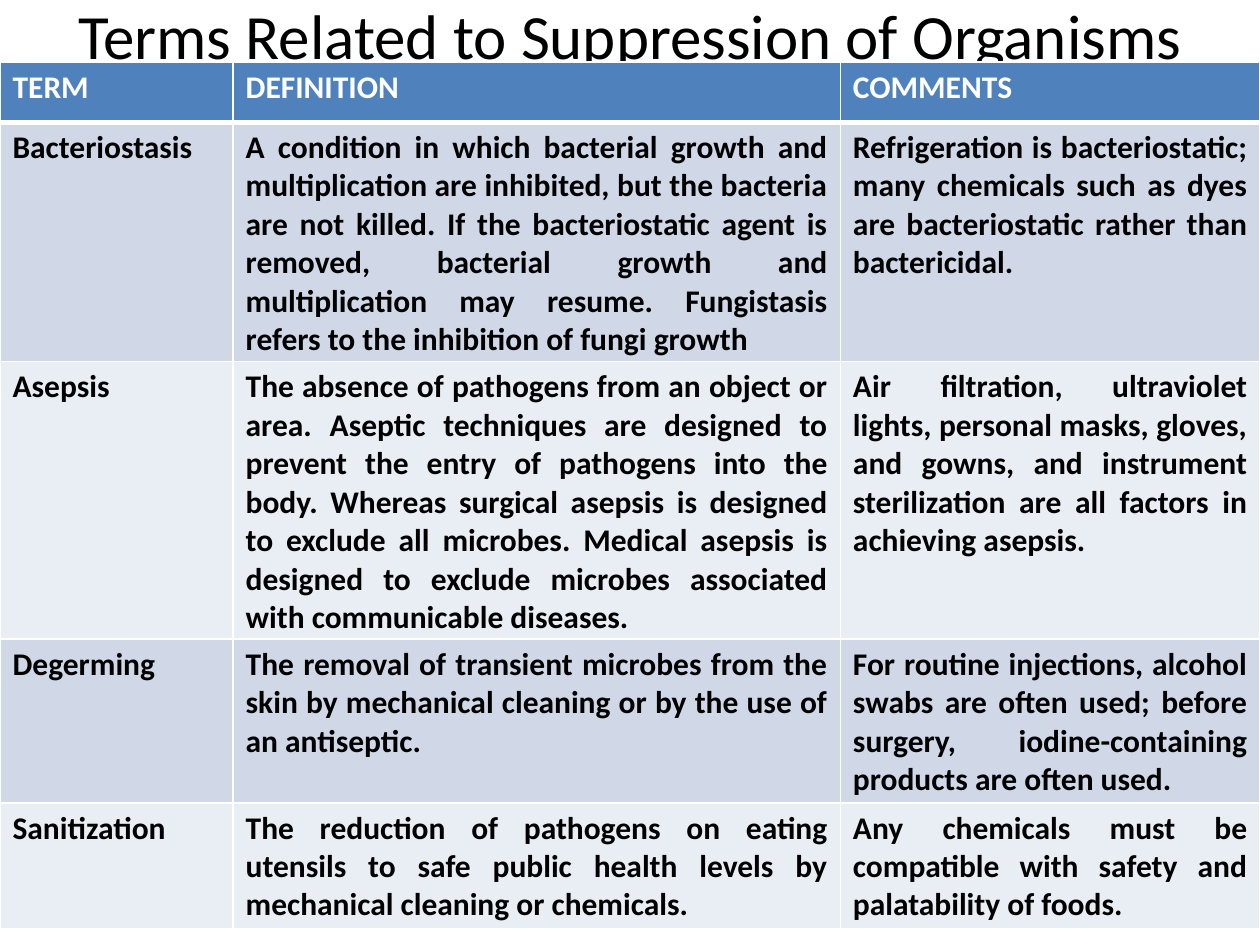
from lxml.etree import SubElement
from pptx import Presentation
from pptx.dml.color import RGBColor
from pptx.enum.text import MSO_ANCHOR as Anchor, PP_ALIGN as Align
from pptx.oxml.ns import qn
from pptx.util import Inches, Pt

FONT = "Calibri"
BLACK, WHITE = "000000", "FFFFFF"
HEADER_FILL, BAND_FILLS = "4F81BD", ("D0D8E8", "E9EDF4")
COLUMN_WIDTHS = (1.85, 4.82, 3.33)
ROW_HEIGHTS = (0.48, 1.88, 2.19, 1.25, 0.97)
ROWS = (
    ("TERM", "DEFINITION", "COMMENTS"),
    ("Bacteriostasis",
     "A condition in which bacterial growth and multiplication are inhibited, "
     "but the bacteria are not killed. If the bacteriostatic agent is removed, "
     "bacterial growth and multiplication may resume. Fungistasis refers to "
     "the inhibition of fungi growth",
     "Refrigeration is bacteriostatic; many chemicals such as dyes are "
     "bacteriostatic rather than bactericidal."),
    ("Asepsis",
     "The absence of pathogens from an object or area. Aseptic techniques are "
     "designed to prevent the entry of pathogens into the body. Whereas "
     "surgical asepsis is designed to exclude all microbes. Medical asepsis is "
     "designed to exclude microbes associated with communicable diseases.",
     "Air filtration, ultraviolet lights, personal masks, gloves, and gowns, "
     "and instrument sterilization are all factors in achieving asepsis."),
    ("Degerming",
     "The removal of transient microbes from the skin by mechanical cleaning "
     "or by the use of an antiseptic.",
     "For routine injections, alcohol swabs are often used; before surgery, "
     "iodine-containing products are often used."),
    ("Sanitization",
     "The reduction of pathogens on eating utensils to safe public health "
     "levels by mechanical cleaning or chemicals.",
     "Any chemicals must be compatible with safety and palatability of foods."),
)


def color(hex_string):
    return RGBColor.from_string(hex_string)


def style_paragraph(paragraph, size, hex_string, align, bold=False):
    paragraph.alignment = align
    font = paragraph.font
    font.name, font.size, font.bold = FONT, Pt(size), bold
    font.color.rgb = color(hex_string)


def set_borders(cell, widths):
    """Draw white borders; widths are points for left, right, top, bottom."""
    properties = cell._tc.get_or_add_tcPr()
    for position, (side, width) in enumerate(zip("LRTB", widths)):
        line = properties.makeelement(qn(f"a:ln{side}"), {"w": str(Pt(width))})
        fill = SubElement(line, qn("a:solidFill"))
        SubElement(fill, qn("a:srgbClr"), val=WHITE)
        properties.insert(position, line)


def add_title(slide, left, top, width, height):
    frame = slide.shapes.add_textbox(left, top, width, height).text_frame
    frame.word_wrap = True
    frame.vertical_anchor = Anchor.MIDDLE
    frame.margin_top = frame.margin_bottom = 0
    frame.text = "Terms Related to Suppression of Organisms"
    style_paragraph(frame.paragraphs[0], 36, BLACK, Align.CENTER)


def add_terms_table(slide, left, top, width, height):
    table = slide.shapes.add_table(
        len(ROWS), len(COLUMN_WIDTHS), left, top, width, height).table
    for column, column_width in zip(table.columns, COLUMN_WIDTHS):
        column.width = Inches(column_width)
    for row, row_height in zip(table.rows, ROW_HEIGHTS):
        row.height = Inches(row_height)

    for row_index, texts in enumerate(ROWS):
        is_header = row_index == 0
        fill = HEADER_FILL if is_header else BAND_FILLS[(row_index - 1) % 2]
        for column_index, text in enumerate(texts):
            cell = table.cell(row_index, column_index)
            cell.text = text
            cell.fill.solid()
            cell.fill.fore_color.rgb = color(fill)
            justified = not is_header and column_index > 0
            style_paragraph(cell.text_frame.paragraphs[0], 18,
                            WHITE if is_header else BLACK,
                            Align.JUSTIFY if justified else Align.LEFT, True)
            # The rule under the header is thicker
            set_borders(cell, (1, 1, 3 if row_index == 1 else 1,
                               3 if is_header else 1))


def main():
    presentation = Presentation()
    presentation.slide_width, presentation.slide_height = Inches(10), Inches(7.5)
    slide = presentation.slides.add_slide(presentation.slide_layouts[6])
    # Title above a full-width table
    add_title(slide, Inches(0.5), Inches(0), Inches(9), Inches(0.54))
    add_terms_table(slide, Inches(0), Inches(0.49),
                    Inches(sum(COLUMN_WIDTHS)), Inches(sum(ROW_HEIGHTS)))
    presentation.save("out.pptx")


if __name__ == "__main__":
    main()
